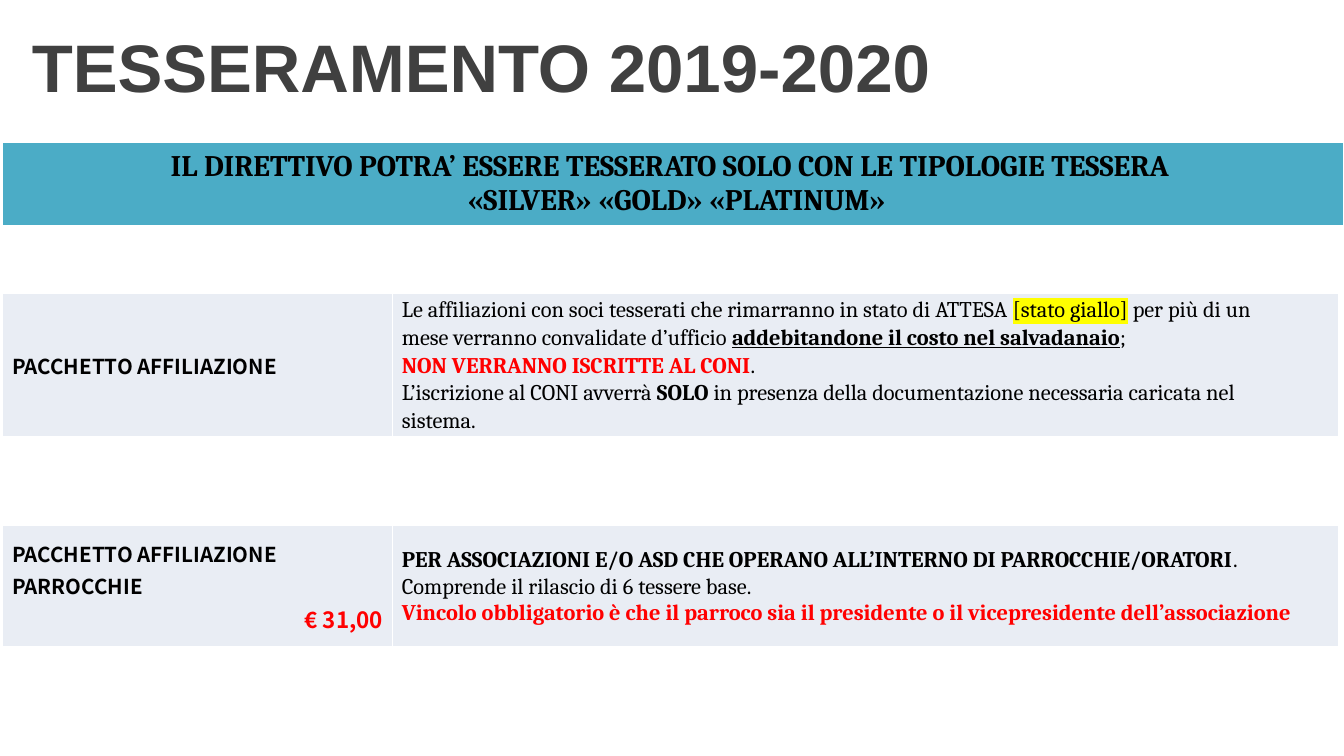
"""Build the 2019-2020 membership slide with its banner and affiliation table."""
from lxml.etree import SubElement, Element
from pptx import Presentation
from pptx.dml.color import RGBColor as Rgb
from pptx.enum.text import MSO_ANCHOR as Anchor, PP_ALIGN as Align
from pptx.oxml.ns import qn
from pptx.util import Inches, Pt

COLORS = {"title": "404040", "text": "000000", "alert": "FF0000", "mark": "FFFF00",
          "band": "E9EDF4", "gap": "FFFFFF", "banner": "4BACC6", "border": "FFFFFF"}
WIDTH = 10
HEIGHT = WIDTH * 9 / 16

TITLE = {"name": "Arial", "size": 36, "bold": True, "color": "title"}
HEADING = {"name": "Cambria", "size": 16, "bold": True, "color": "text"}
LABEL = {"name": "Noto Sans CJK KR", "size": 11, "bold": True, "color": "text"}
PRICE = LABEL | {"size": 12, "color": "alert"}
BODY = {"name": "Cambria", "size": 12, "bold": False, "color": "text"}
STRONG = BODY | {"bold": True}
LINK = STRONG | {"underline": True}
ALERT = STRONG | {"color": "alert"}
MARK = BODY | {"mark": "mark"}

LEFT, CENTER, RIGHT, JUSTIFY = Align.LEFT, Align.CENTER, Align.RIGHT, Align.JUSTIFY
LOOSE = 1.07
TITLE_PARAS = [(LEFT, None, [(" TESSERAMENTO 2019-2020", TITLE)])]
BANNER = [[[
    (CENTER, None, [("IL DIRETTIVO POTRA’ ESSERE TESSERATO SOLO CON LE TIPOLOGIE TESSERA ", HEADING)]),
    (CENTER, None, [(" «SILVER» «GOLD» «PLATINUM»", HEADING)]),
]]]
PACKAGES = [
    [
        [(LEFT, LOOSE, [("PACCHETTO AFFILIAZIONE", LABEL)])],
        [
            (JUSTIFY, LOOSE, [
                ("Le affiliazioni con soci tesserati che rimarranno in stato di ATTESA ", BODY),
                ("[stato giallo]", MARK), (" per più di un ", BODY)]),
            (JUSTIFY, LOOSE, [
                ("mese verranno convalidate d’ufficio ", BODY),
                ("addebitandone il costo nel salvadanaio", LINK), ("; ", BODY)]),
            (JUSTIFY, LOOSE, [("NON VERRANNO ISCRITTE AL CONI", ALERT), (". ", BODY)]),
            (JUSTIFY, LOOSE, [
                ("L’iscrizione al CONI avverrà ", BODY), ("SOLO", STRONG),
                (" in presenza della documentazione necessaria caricata nel ", BODY)]),
            (JUSTIFY, LOOSE, [("sistema.", BODY)]),
        ],
    ],
    [[], []],
    [
        [
            (LEFT, LOOSE, [("PACCHETTO AFFILIAZIONE", LABEL)]),
            (LEFT, LOOSE, [("PARROCCHIE", LABEL)]),
            (RIGHT, LOOSE, [("€ 31,00", PRICE)]),
        ],
        [
            (LEFT, LOOSE, [
                ("PER ASSOCIAZIONI E/O ASD CHE OPERANO ALL’INTERNO DI PARROCCHIE/ORATORI", STRONG),
                (". ", BODY), ("\n", BODY),
                ("Comprende il rilascio di 6 tessere base.", BODY)]),
            (LEFT, None, [
                ("Vincolo obbligatorio è che il parroco sia il presidente"
                 " o il vicepresidente dell’associazione", ALERT)]),
        ],
    ],
]


def color(name):
    return Rgb.from_string(COLORS[name])


def add_span(para, text, style):
    if text == "\n":
        para.add_line_break()
        return
    span = para.add_run()
    span.text = text
    span.font.color.rgb = color(style["color"])
    span.font.size = Pt(style["size"])
    for key in ("name", "bold", "underline"):
        if key in style:
            setattr(span.font, key, style[key])
    if "mark" in style:
        highlight = Element(qn("a:highlight"))
        SubElement(highlight, qn("a:srgbClr"), val=COLORS[style["mark"]])
        span.font._element.find(qn("a:solidFill")).addnext(highlight)


def write(frame, paras):
    for index, (align, spacing, spans) in enumerate(paras):
        para = frame.add_paragraph() if index else frame.paragraphs[0]
        para.alignment = align
        if spacing:
            para.line_spacing = spacing
        for text, style in spans:
            add_span(para, text, style)


def add_borders(cell, bottom):
    for side, width in {"L": 1, "R": 1, "T": 1, "B": bottom}.items():
        line = SubElement(cell._tc.get_or_add_tcPr(), qn(f"a:ln{side}"),
                          w=str(Pt(width)), cmpd="sng")
        fill = SubElement(line, qn("a:solidFill"))
        SubElement(fill, qn("a:srgbClr"), val=COLORS["border"])
        SubElement(line, qn("a:prstDash"), val="solid")


def add_grid(page, left, top, widths, heights, rows, fills, layout, bottom=1):
    box = page.shapes.add_table(len(heights), len(widths), Inches(left), Inches(top),
                                Inches(sum(widths)), Inches(sum(heights)))
    table = box.table
    table.first_row = table.horz_banding = False
    for column, width in zip(table.columns, widths):
        column.width = Inches(width)
    for row, height, contents, fill in zip(table.rows, heights, rows, fills):
        row.height = Inches(height)
        for cell, paras in zip(row.cells, contents):
            for key, value in layout.items():
                setattr(cell, key, value)
            add_borders(cell, bottom)
            cell.fill.solid()
            cell.fill.fore_color.rgb = color(fill)
            write(cell.text_frame, paras)


def main():
    deck = Presentation()
    deck.slide_width, deck.slide_height = Inches(WIDTH), Inches(HEIGHT)
    page = deck.slides.add_slide(deck.slide_layouts[6])

    box = page.shapes.add_textbox(0, 0, Inches(WIDTH), Inches(0.97))
    box.text_frame.word_wrap = True
    box.text_frame.vertical_anchor = Anchor.MIDDLE
    write(box.text_frame, TITLE_PARAS)

    tight = {"margin_left": Inches(0.07), "margin_right": Inches(0.07),
             "margin_top": 0, "margin_bottom": 0, "vertical_anchor": Anchor.MIDDLE}
    edge = 0.02
    add_grid(page, edge, 2.18, [2.9, 7.04], [0.9, 0.66, 0.9], PACKAGES,
             ["band", "gap", "band"], tight)
    add_grid(page, edge, 1.06, [WIDTH - edge], [0.41], BANNER, ["banner"], {}, bottom=3)
    deck.save("out.pptx")


if __name__ == "__main__":
    main()
